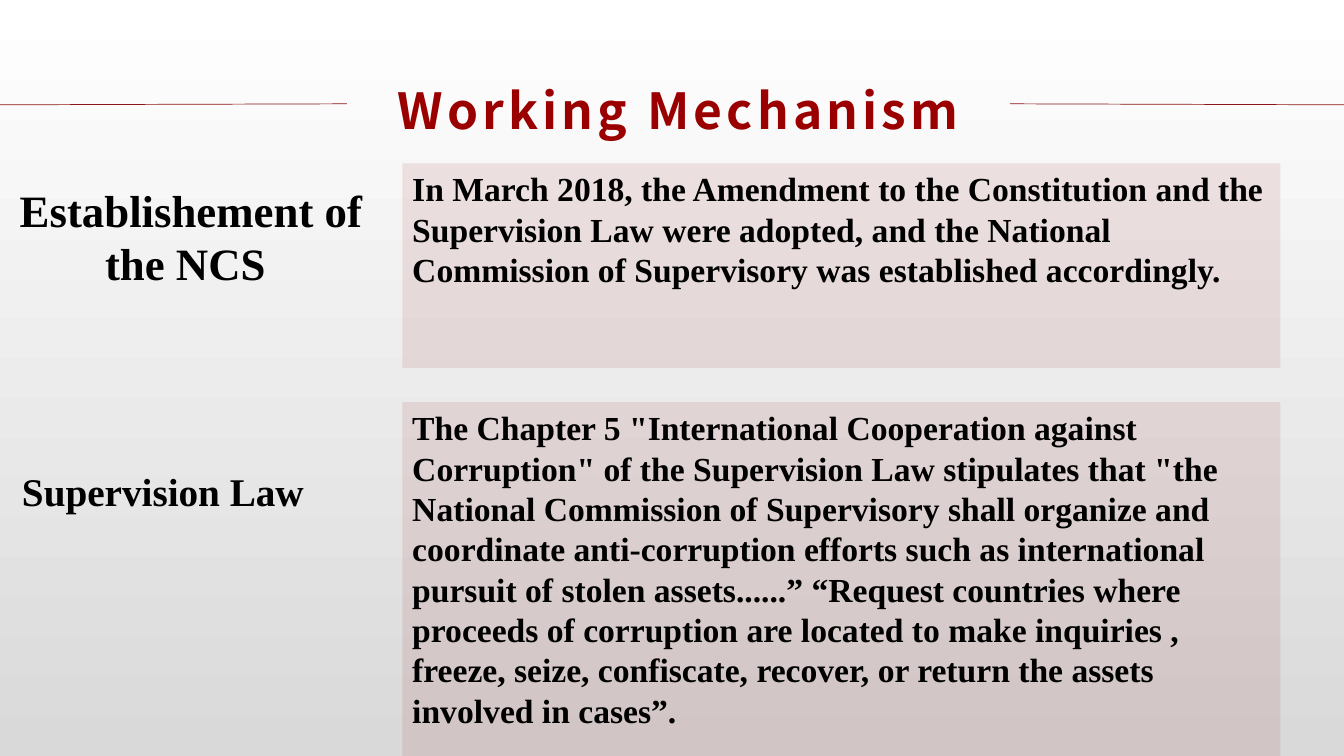
from dataclasses import dataclass

from lxml import etree
from pptx import Presentation
from pptx import util as u
from pptx.dml.color import RGBColor
from pptx.enum import shapes, text
from pptx.oxml.ns import qn


@dataclass(frozen=True)
class Theme:
    title: str = "9B0000"
    accent: str = "8C1515"
    ink: str = "000000"
    top: str = "FFFFFF"
    base: str = "D9D9D9"
    sans: str = "Noto Sans CJK SC"
    serif: str = "Times New Roman"
    head: float = 35.5
    large: float = 32
    mid: float = 28
    body: float = 24


THEME = Theme()
WIDE, HIGH = 13.33, 7.5


def rgb(code):
    return RGBColor.from_string(code)


def place(box):
    return [u.Inches(side) for side in box]


def write(par, words, size=THEME.body, font=THEME.serif, color=THEME.ink,
          bold=True, align=text.PP_ALIGN.LEFT, track=0):
    """Add one run to a paragraph; track is letter spacing in points."""
    par.alignment = align
    run = par.add_run()
    run.text = words
    run.font.size = u.Pt(size)
    run.font.name = font
    run.font.bold = bold
    run.font.color.rgb = rgb(color)
    props = run.font._element
    etree.SubElement(props, qn("a:ea")).set("typeface", font)
    if track:
        props.set("spc", str(track * 100))


def paint(slide):
    fill = slide.background.fill
    fill.gradient()
    fill.gradient_angle = 270
    for stop, code in zip(fill.gradient_stops, (THEME.top, THEME.base)):
        stop.color.rgb = rgb(code)


def rule(slide, start, end):
    line = slide.shapes.add_connector(
        shapes.MSO_CONNECTOR.STRAIGHT, *place(start + end))
    line.line.color.rgb = rgb(THEME.accent)
    line.line.width = u.Pt(0.5)
    etree.SubElement(line._element.spPr, qn("a:effectLst"))


def header(slide, box):
    """Place the title in its box, with a rule from each side to the edge."""
    left, top, width, high = box
    title = slide.shapes.title
    title.left, title.top, title.width, title.height = place(box)
    frame = title.text_frame
    frame.auto_size = text.MSO_AUTO_SIZE.NONE
    frame.vertical_anchor = text.MSO_ANCHOR.MIDDLE
    par = frame.paragraphs[0]
    par.line_spacing = 0.9
    write(par, "Working Mechanism", size=THEME.head, font=THEME.sans,
          color=THEME.title, align=text.PP_ALIGN.CENTER, track=3)
    near, far = top + 0.39, top + 0.4
    rule(slide, (0, far), (left, near))
    rule(slide, (left + width, near), (WIDE, far))


def panel(slide, box, words):
    card = slide.shapes.add_shape(shapes.MSO_SHAPE.RECTANGLE, *place(box))
    card.shadow.inherit = False
    card.line.fill.background()
    card.fill.solid()
    card.fill.fore_color.rgb = rgb(THEME.accent)
    tint = card._element.spPr.find(".//" + qn("a:srgbClr"))
    etree.SubElement(tint, qn("a:alpha")).set("val", "10000")
    frame = card.text_frame
    frame.word_wrap = True
    frame.vertical_anchor = text.MSO_ANCHOR.TOP
    write(frame.paragraphs[0], words)


def label(slide, box):
    """Add a growing text box and return its paragraph."""
    frame = slide.shapes.add_textbox(*place(box)).text_frame
    frame.word_wrap = True
    frame.auto_size = text.MSO_AUTO_SIZE.SHAPE_TO_FIT_TEXT
    return frame.paragraphs[0]


def founding(slide, box):
    left, top, width, high = box
    panel(slide, box,
          "In March 2018, the Amendment to the Constitution and the "
          "Supervision Law were adopted, and the National Commission of "
          "Supervisory was established accordingly.")
    par = label(slide, (0, top + 0.14, left - 0.2, 1.18))
    write(par, "Establishement of the NCS ", size=THEME.large,
          align=text.PP_ALIGN.CENTER)


def law(slide, box):
    left, top, width, high = box
    par = label(slide, (0.12, top + 0.54, left - 0.03, 0.64))
    write(par, "Supervision Law", size=THEME.mid)
    write(par, " ", size=THEME.large, font=THEME.sans, bold=False)
    panel(slide, box,
          'The Chapter 5 "International Cooperation against Corruption" of '
          'the Supervision Law stipulates that "the National Commission of '
          'Supervisory shall organize and coordinate anti-corruption efforts '
          'such as international pursuit of stolen assets......” “Request '
          'countries where proceeds of corruption are located to make '
          'inquiries , freeze, seize, confiscate, recover, or return the '
          'assets involved in cases”.')


def main():
    deck = Presentation()
    deck.slide_width, deck.slide_height = place((WIDE, HIGH))
    slide = deck.slides.add_slide(deck.slide_layouts.get_by_name("Title Only"))
    paint(slide)
    header(slide, (3.44, 0.64, 6.58, 0.98))
    left, width = 3.99, 8.71
    founding(slide, (left, 1.62, width, 2.03))
    law(slide, (left, 3.99, width, 3.68))
    deck.save("out.pptx")


if __name__ == "__main__":
    main()
